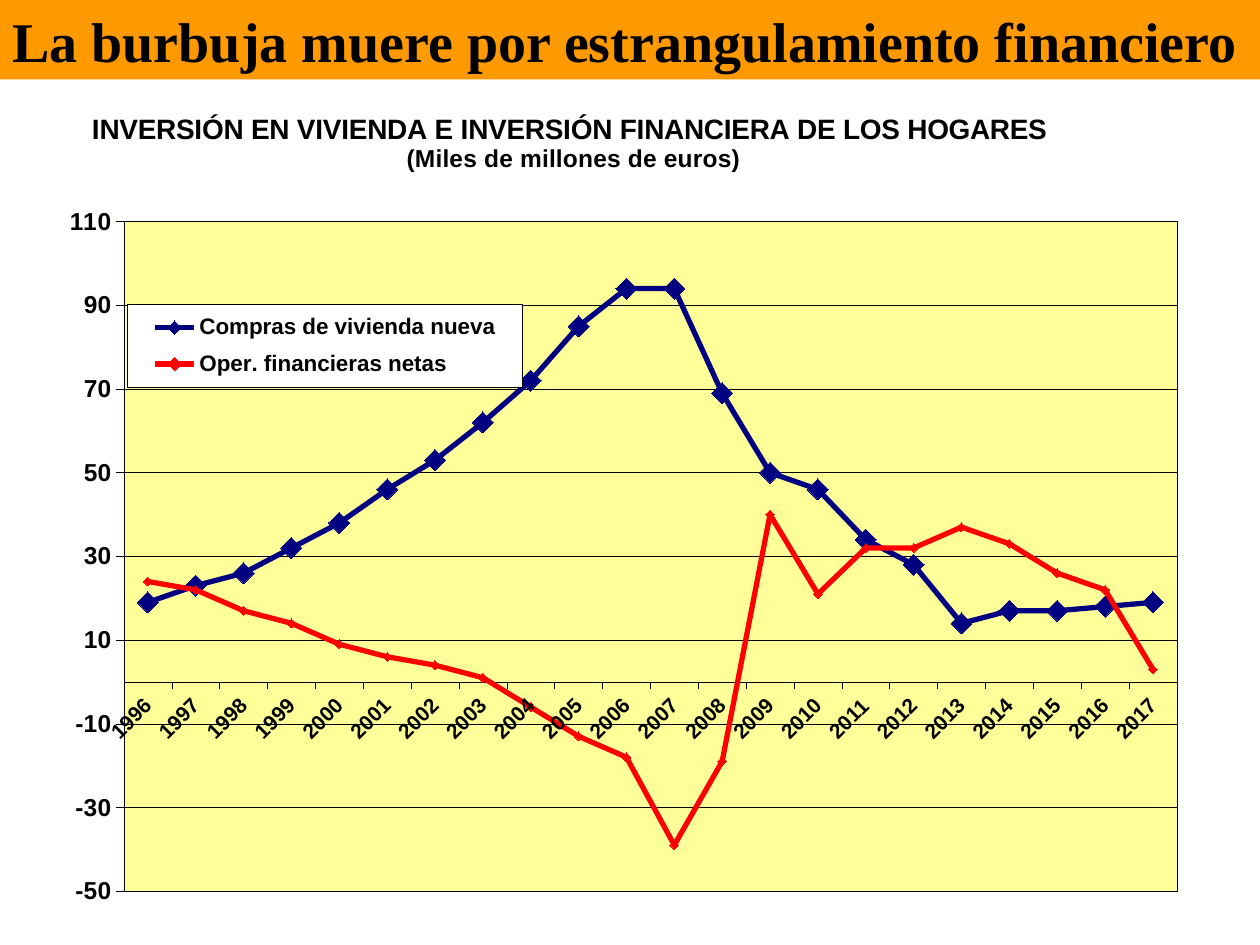
"""Build a slide on Spanish household housing and financial investment."""
from dataclasses import dataclass

from lxml import etree
from pptx import Presentation
from pptx.chart.data import CategoryChartData
from pptx.dml.color import RGBColor
from pptx.enum.chart import XL_CHART_TYPE, XL_LEGEND_POSITION, XL_MARKER_STYLE, XL_TICK_MARK
from pptx.enum.shapes import MSO_SHAPE
from pptx.enum.text import MSO_ANCHOR, PP_ALIGN
from pptx.oxml import parse_xml
from pptx.oxml.ns import nsdecls, qn
from pptx.util import Pt

LINE_MARKERS = XL_CHART_TYPE.LINE_MARKERS
LEGEND_RIGHT = XL_LEGEND_POSITION.RIGHT
DIAMOND = XL_MARKER_STYLE.DIAMOND
TICK_OUT, TICK_NONE = XL_TICK_MARK.OUTSIDE, XL_TICK_MARK.NONE
RECTANGLE = MSO_SHAPE.RECTANGLE
MIDDLE = MSO_ANCHOR.MIDDLE
LEFT = PP_ALIGN.LEFT

BLACK, WHITE = "000000", "FFFFFF"
ORANGE, PALE_YELLOW = "FF9900", "FFFF99"
NAVY, RED = "000080", "FF0000"
HAIRLINE = 0.25


@dataclass(frozen=True)
class Measure:
    name: str
    values: tuple
    color: str
    marker_size: int


@dataclass(frozen=True)
class TitleLine:
    text: str
    size: float


YEARS = [str(year) for year in range(1996, 2018)]
MEASURES = (
    Measure("Compras de vivienda nueva",
            (19, 23, 26, 32, 38, 46, 53, 62, 72, 85, 94,
             94, 69, 50, 46, 34, 28, 14, 17, 17, 18, 19), NAVY, 12),
    Measure("Oper. financieras netas",
            (24, 22, 17, 14, 9, 6, 4, 1, -6, -13, -18,
             -39, -19, 40, 21, 32, 32, 37, 33, 26, 22, 3), RED, 5),
)
TITLE_LINES = (
    TitleLine("INVERSIÓN EN VIVIENDA E INVERSIÓN FINANCIERA DE LOS HOGARES ", 16),
    TitleLine("(Miles de millones de euros)", 14),
)


def rgb(color: str) -> RGBColor:
    return RGBColor.from_string(color)


def style_font(font, size: float, name: str = "Arial", bold: bool = True) -> None:
    font.size, font.name, font.bold = Pt(size), name, bold
    font.color.rgb = rgb(BLACK)


def style_line(line, color: str, width: float) -> None:
    line.color.rgb = rgb(color)
    line.width = Pt(width)


def place(part, index: int, target: str = "", **fractions: float) -> None:
    """Give a chart part a manual layout in fractions of the chart."""
    for old in part.findall(qn("c:layout")):
        part.remove(old)
    layout = etree.Element(qn("c:layout"))
    manual = etree.SubElement(layout, qn("c:manualLayout"))
    settings = {"layoutTarget": target} if target else {}
    settings.update(xMode="edge", yMode="edge", **fractions)
    for tag, value in settings.items():
        etree.SubElement(manual, qn(f"c:{tag}")).set("val", str(value))
    part.insert(index, layout)


def box_properties(fill: str):
    return parse_xml(
        f'<c:spPr {nsdecls("c", "a")}>'
        f'<a:solidFill><a:srgbClr val="{fill}"/></a:solidFill>'
        f'<a:ln w="{Pt(HAIRLINE)}"><a:solidFill><a:srgbClr val="{BLACK}"/></a:solidFill></a:ln>'
        '</c:spPr>')


def style_axis(axis, size: float) -> None:
    axis.major_tick_mark, axis.minor_tick_mark = TICK_OUT, TICK_NONE
    style_font(axis.tick_labels.font, size)
    style_line(axis.format.line, BLACK, HAIRLINE)


def add_banner(slide, text: str) -> None:
    banner = slide.shapes.add_shape(RECTANGLE, Pt(0), Pt(0), Pt(720), Pt(45.4))
    banner.shadow.inherit = False
    banner.fill.solid()
    banner.fill.fore_color.rgb = rgb(ORANGE)
    banner.line.fill.background()
    frame = banner.text_frame
    frame.word_wrap = True
    frame.vertical_anchor = MIDDLE
    heading = frame.paragraphs[0]
    heading.text = text
    heading.alignment = LEFT
    style_font(heading.font, 32, "Times New Roman")


def add_title(chart) -> None:
    chart.has_title = True
    frame = chart.chart_title.text_frame
    for index, line in enumerate(TITLE_LINES):
        paragraph = frame.add_paragraph() if index else frame.paragraphs[0]
        paragraph.text = line.text
        style_font(paragraph.font, line.size)
    place(chart.element.find(f".//{qn('c:title')}"), 1, x=0.135, y=0.025)


def add_legend(chart) -> None:
    chart.has_legend = True
    chart.legend.position = LEGEND_RIGHT
    chart.legend.include_in_layout = False
    style_font(chart.legend.font, 12.8)
    legend = chart.element.find(f".//{qn('c:legend')}")
    place(legend, 1, x=0.162, y=0.239, w=0.277, h=0.092)
    legend.find(qn("c:overlay")).addnext(box_properties(WHITE))


def style_series(series, measure: Measure) -> None:
    series.smooth = False
    style_line(series.format.line, measure.color, 3)
    marker = series.marker
    marker.style, marker.size = DIAMOND, measure.marker_size
    marker.format.fill.solid()
    marker.format.fill.fore_color.rgb = rgb(measure.color)
    style_line(marker.format.line, measure.color, HAIRLINE)


def add_investment_chart(slide) -> None:
    investment = CategoryChartData()
    investment.categories = YEARS
    for measure in MEASURES:
        investment.add_series(measure.name, measure.values)
    chart = slide.shapes.add_chart(
        LINE_MARKERS, Pt(-59.8), Pt(49), Pt(816.5), Pt(521.3), investment).chart
    style_font(chart.font, 8, bold=False)
    add_title(chart)
    add_legend(chart)
    chart.plots[0].vary_by_categories = False
    for series, measure in zip(chart.plots[0].series, MEASURES):
        style_series(series, measure)

    years, amounts = chart.category_axis, chart.value_axis
    style_axis(years, 12)
    year_labels = chart.element.find(f".//{qn('c:catAx')}/{qn('c:txPr')}/{qn('a:bodyPr')}")
    year_labels.set("rot", str(-45 * 60000))
    style_axis(amounts, 14)
    amounts.minimum_scale, amounts.maximum_scale, amounts.major_unit = -50, 110, 20
    amounts.has_major_gridlines = True
    style_line(amounts.major_gridlines.format.line, BLACK, HAIRLINE)

    plot_area = chart.element.find(f".//{qn('c:plotArea')}")
    place(plot_area, 0, "inner", x=0.16, y=0.149, w=0.737, h=0.734)
    plot_area.append(box_properties(PALE_YELLOW))


def main() -> None:
    deck = Presentation()
    deck.slide_width, deck.slide_height = Pt(720), Pt(540)
    slide = deck.slides.add_slide(deck.slide_layouts[6])
    add_banner(slide, "La burbuja muere por estrangulamiento financiero")
    add_investment_chart(slide)
    deck.save("out.pptx")


if __name__ == "__main__":
    main()
